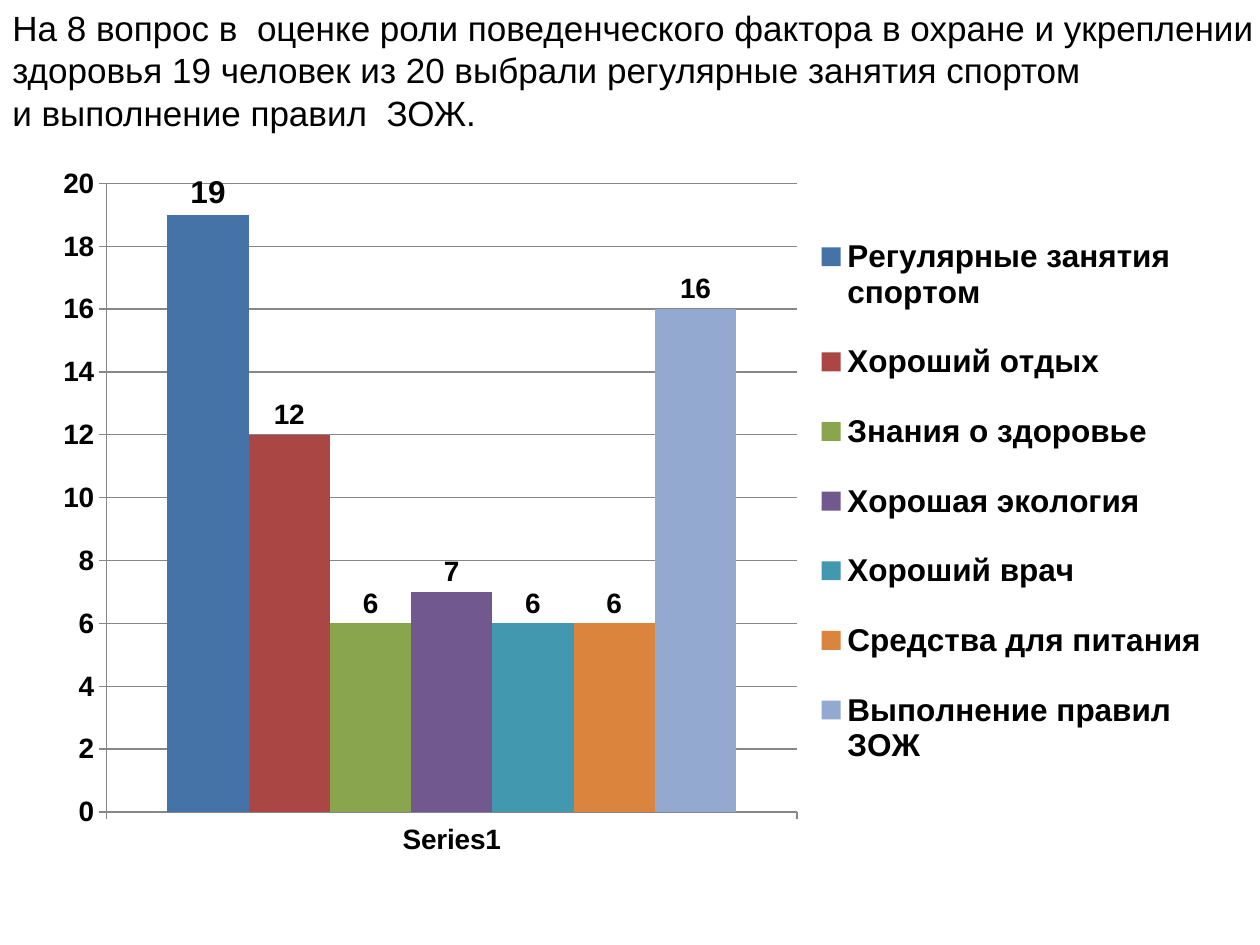
from dataclasses import dataclass

from pptx import Presentation
from pptx.chart.data import CategoryChartData
from pptx.dml.color import RGBColor
from pptx.enum.chart import XL_CHART_TYPE, XL_LABEL_POSITION, XL_LEGEND_POSITION, XL_TICK_MARK
from pptx.enum.text import MSO_ANCHOR, MSO_AUTO_SIZE, PP_ALIGN
from pptx.oxml import parse_xml
from pptx.oxml.ns import nsdecls
from pptx.util import Pt


@dataclass(frozen=True)
class Theme:
    face: str = "Arial"
    ink: RGBColor = RGBColor(0, 0, 0)
    grid: RGBColor = RGBColor.from_string("878787")
    body: Pt = Pt(20)
    large: Pt = Pt(18)
    small: Pt = Pt(16)


theme = Theme()
lines = [
    "На 8 вопрос в  оценке роли поведенческого фактора в охране и укреплении",
    "здоровья 19 человек из 20 выбрали регулярные занятия спортом",
    "и выполнение правил  ЗОЖ.",
]
answers = [
    ("Регулярные занятия спортом", 19, "4572A7"),
    ("Хороший отдых", 12, "AA4643"),
    ("Знания о здоровье", 6, "89A54E"),
    ("Хорошая экология", 7, "71588F"),
    ("Хороший врач", 6, "4198AF"),
    ("Средства для питания", 6, "DB843D"),
    ("Выполнение правил ЗОЖ", 16, "93A9CF"),
]


def style(font, size, bold=False):
    font.name, font.size, font.bold = theme.face, size, bold
    font.color.rgb = theme.ink


def place(part, index, target, **box):
    """Fix a chart part at fractions of the chart area."""
    for old in part.xpath("c:layout"):
        part.remove(old)
    modes = '<c:xMode val="edge"/><c:yMode val="edge"/>'
    sizes = "".join(f'<c:{key} val="{val}"/>' for key, val in box.items())
    part.insert(index, parse_xml(
        f'<c:layout {nsdecls("c")}><c:manualLayout>{target}{modes}{sizes}'
        "</c:manualLayout></c:layout>"))


deck = Presentation()
deck.slide_width, deck.slide_height = Pt(720), Pt(540)
slide = deck.slides.add_slide(deck.slide_layouts[6])

# Statement above the chart
frame = slide.shapes.add_textbox(Pt(0), Pt(0), Pt(734.4), Pt(80)).text_frame
frame.word_wrap = False
frame.auto_size = MSO_AUTO_SIZE.SHAPE_TO_FIT_TEXT
frame.vertical_anchor = MSO_ANCHOR.MIDDLE
frame.text = "\n".join(lines)
for para in frame.paragraphs:
    para.alignment = PP_ALIGN.JUSTIFY
    style(para.font, theme.body)

# Answers, one series each
data = CategoryChartData()
data.categories = ["Series1"]
for name, count, _ in answers:
    data.add_series(name, [count])
chart = slide.shapes.add_chart(
    XL_CHART_TYPE.COLUMN_CLUSTERED, Pt(20), Pt(88.5), Pt(680.4), Pt(408.2), data).chart
style(chart.font, theme.small, True)
chart.has_title = False

plot = chart.plots[0]
plot.gap_width, plot.overlap = 150, 0
plot.vary_by_categories = False
for order, (series, answer) in enumerate(zip(plot.series, answers)):
    series.format.fill.solid()
    series.format.fill.fore_color.rgb = RGBColor.from_string(answer[2])
    labels = series.data_labels
    labels.show_value = True
    labels.position = XL_LABEL_POSITION.OUTSIDE_END
    style(labels.font, theme.small if order else theme.large, True)

scale = chart.value_axis
scale.minimum_scale, scale.maximum_scale, scale.major_unit = 0, 20, 2
scale.has_major_gridlines = True
for axis in (scale, chart.category_axis):
    axis.major_tick_mark = XL_TICK_MARK.OUTSIDE
    axis.format.line.color.rgb = theme.grid
scale.major_gridlines.format.line.color.rgb = theme.grid

chart.has_legend = True
legend = chart.legend
legend.position = XL_LEGEND_POSITION.RIGHT
legend.include_in_layout = False
style(legend.font, theme.large, True)

area = chart.element.xpath("c:chart/c:plotArea")[0]
key = chart.element.xpath("c:chart/c:legend")[0]
place(area, 0, '<c:layoutTarget val="inner"/>', x=0.06, y=0.04, w=0.58, h=0.88)
place(key, 1, "", x=0.65, y=0.07, w=0.34, h=0.83)

deck.save("out.pptx")
